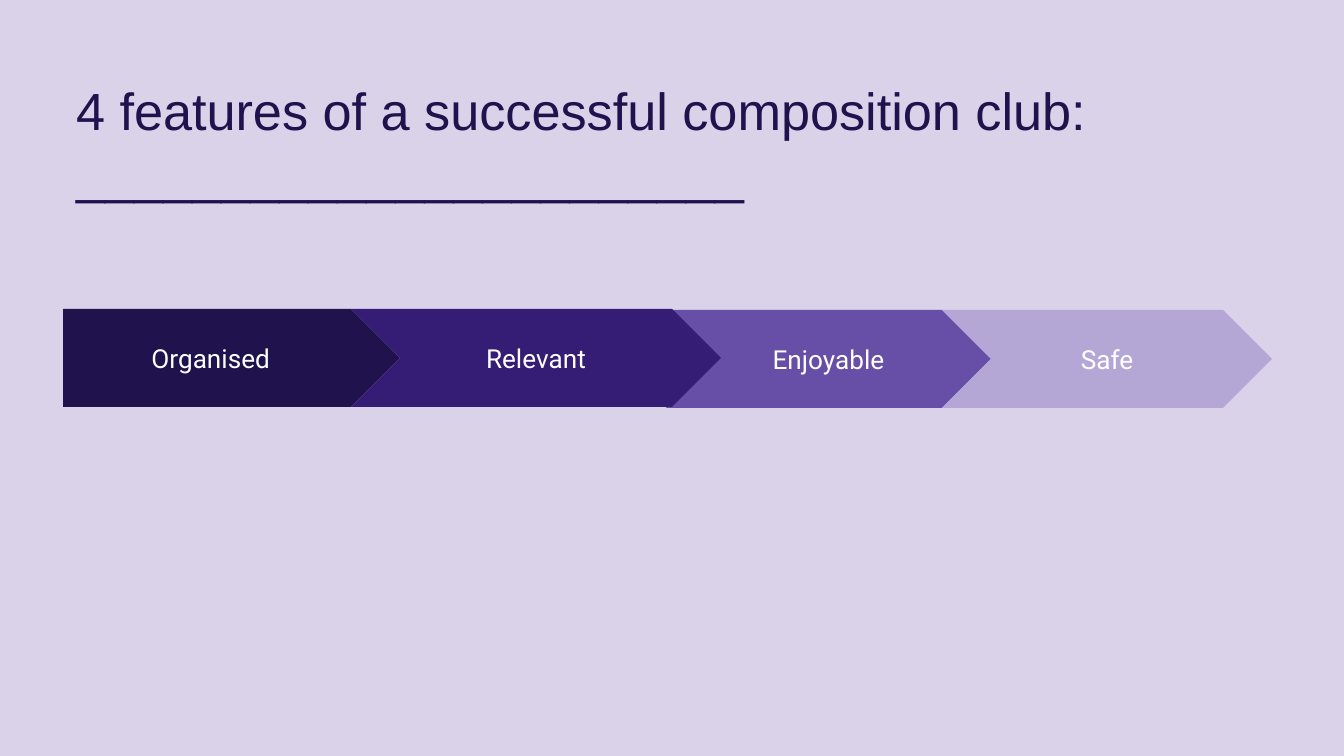
from dataclasses import dataclass

from pptx import Presentation
from pptx import util as u
from pptx.dml.color import RGBColor
from pptx.enum import shapes, text

EMU_PER_PX = 914400 / 134.4


def px(n):
    return u.Emu(round(n * EMU_PER_PX))


@dataclass(frozen=True)
class Theme:
    background: str = "D9D2E9"
    ink: str = "20124D"
    violet: str = "351C75"
    purple: str = "674EA7"
    lilac: str = "B4A7D6"
    white: str = "FFFFFF"
    title_font: str = "Arial"
    label_font: str = "Roboto"
    title_size: int = 28
    label_size: int = 14


class SlideBuilder:
    def __init__(self, prs, theme):
        self.theme = theme
        self.s = prs.slides.add_slide(prs.slide_layouts[5])
        fill = self.s.background.fill
        fill.solid()
        fill.fore_color.rgb = RGBColor.from_string(theme.background)

    def set_frame(self, tf, anchor, right_inset=13):
        tf.word_wrap = True
        tf.auto_size = text.MSO_AUTO_SIZE.NONE
        tf.vertical_anchor = anchor
        tf.margin_left = tf.margin_top = tf.margin_bottom = px(13)
        tf.margin_right = px(right_inset)

    def set_paragraph(self, p, align, font, size, color):
        p.alignment = align
        p.font.name = font
        p.font.size = u.Pt(size)
        p.font.color.rgb = RGBColor.from_string(color)

    def title(self, lines, left, top, width, height):
        sp = self.s.shapes.title
        sp.left, sp.top, sp.width, sp.height = map(px, (left, top, width, height))
        tf = sp.text_frame
        self.set_frame(tf, text.MSO_ANCHOR.TOP)
        tf.text = "\n".join(lines)
        for p in tf.paragraphs:
            self.set_paragraph(p, text.PP_ALIGN.LEFT, self.theme.title_font,
                               self.theme.title_size, self.theme.ink)

    def arrow(self, kind, label, color, left, top, width, height, right_inset=13):
        sp = self.s.shapes.add_shape(kind, *map(px, (left, top, width, height)))
        sp.shadow.inherit = False
        sp.adjustments[0] = 0.5
        sp.fill.solid()
        sp.fill.fore_color.rgb = RGBColor.from_string(color)
        sp.line.fill.background()
        tf = sp.text_frame
        self.set_frame(tf, text.MSO_ANCHOR.MIDDLE, right_inset)
        tf.text = label
        self.set_paragraph(tf.paragraphs[0], text.PP_ALIGN.CENTER, self.theme.label_font,
                           self.theme.label_size, self.theme.white)


def main():
    prs = Presentation()
    prs.slide_width, prs.slide_height = px(1344), px(756)
    theme = Theme()
    slide = SlideBuilder(prs, theme)

    slide.title(["4 features of a successful composition club:", "_" * 23], 63, 65, 1253, 149)

    chevron = shapes.MSO_SHAPE.CHEVRON
    arrow_height = 98
    # Enjoyable comes first so that Relevant's point lies over it.
    slide.arrow(chevron, "Enjoyable", theme.purple, 666, 310, 325, arrow_height)
    # The wider right inset moves the label left, away from the point.
    slide.arrow(shapes.MSO_SHAPE.PENTAGON, "Organised", theme.ink,
                63, 309, 337, arrow_height, right_inset=30)
    slide.arrow(chevron, "Relevant", theme.violet, 351, 309, 370, arrow_height)
    slide.arrow(chevron, "Safe", theme.lilac, 942, 310, 330, arrow_height)

    prs.save("out.pptx")


if __name__ == "__main__":
    main()
